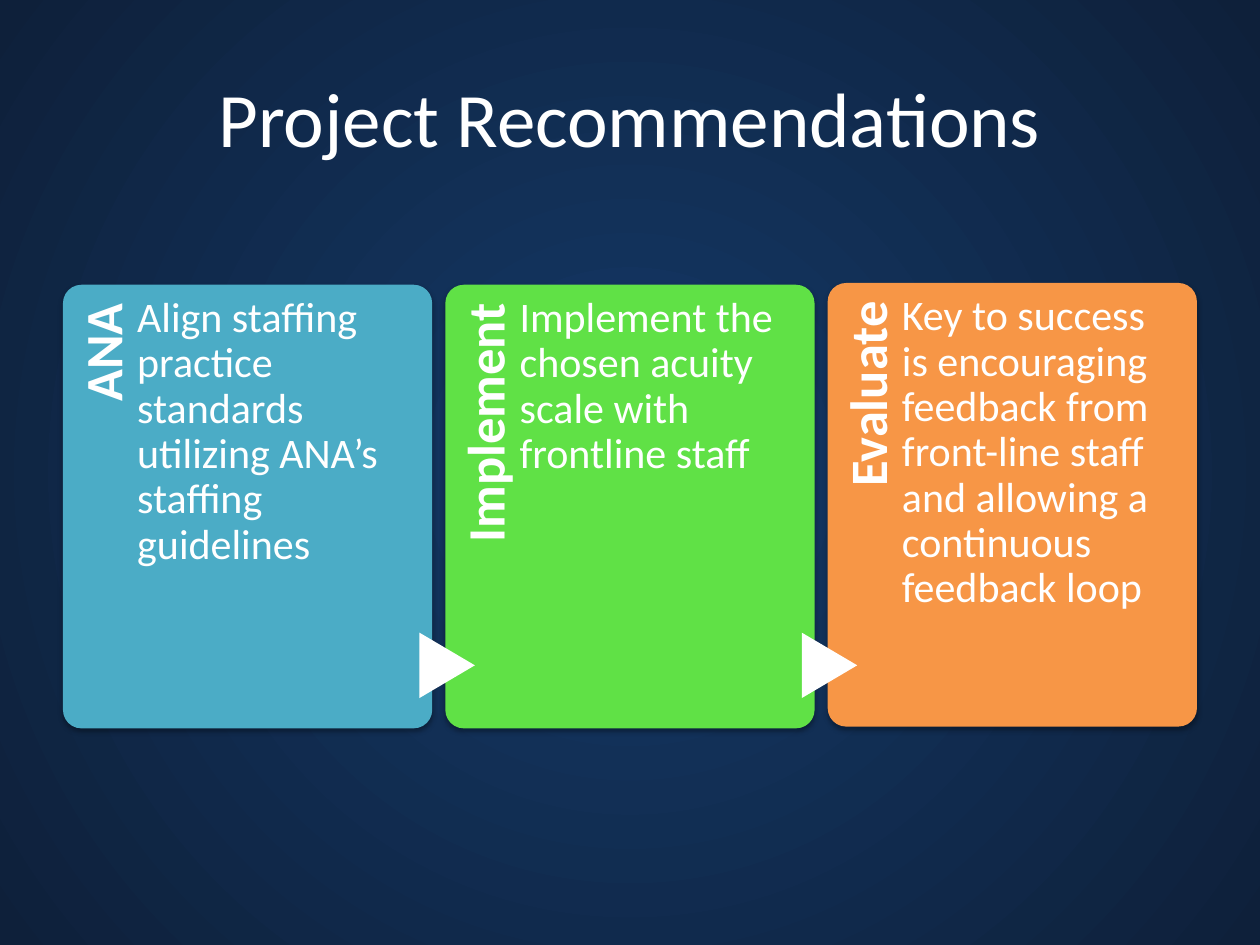
from lxml import etree
from pptx import Presentation
from pptx import oxml
from pptx.dml.color import RGBColor
from pptx.enum import shapes, text
from pptx.oxml import ns
from pptx.util import Pt

COLORS = {
    "centre": "143968", "edge": "0E203A", "white": "FFFFFF", "shadow": "000000",
    "teal": "4BACC6", "green": "60E146", "orange": "F79646",
}
CARDS = [
    ("ANA", "Align staffing practice standards utilizing ANA’s staffing guidelines",
     "teal", 0),
    ("Implement", "Implement the chosen acuity scale with frontline staff",
     "green", 0),
    ("Evaluate", "Key to success is encouraging feedback from front-line staff "
     "and allowing a continuous feedback loop", "orange", -1),
]
CARD_WIDTH, CARD_HEIGHT = 211, 253.5
LABEL_WIDTH, LABEL_LENGTH = 42.4, 207.4
BODY_WIDTH = 157
ARROW_WIDTH, ARROW_HEIGHT = 37.4, 31.7
ARROW_CENTRE = 217.5


def color(name):
    return RGBColor.from_string(COLORS[name])


def write(frame, words, size, bold=False, align=text.PP_ALIGN.LEFT,
          anchor=text.MSO_ANCHOR.TOP, line_spacing=None, insets=None):
    frame.word_wrap = True
    frame.vertical_anchor = anchor
    if insets:
        (frame.margin_left, frame.margin_top,
         frame.margin_right, frame.margin_bottom) = map(Pt, insets)
    paragraph = frame.paragraphs[0]
    paragraph.alignment = align
    if line_spacing:
        paragraph.line_spacing = line_spacing
    run = paragraph.add_run()
    run.text = words
    run.font.name = "Calibri"
    run.font.size = Pt(size)
    run.font.bold = bold
    run.font.color.rgb = color("white")


def add_filled(slide, preset, left, top, width, height, fill):
    shape = slide.shapes.add_shape(preset, Pt(left), Pt(top), Pt(width), Pt(height))
    shape.shadow.inherit = False
    shape.fill.solid()
    shape.fill.fore_color.rgb = color(fill)
    shape.line.fill.background()
    return shape


def add_shadow(shape):
    effects = shape._element.spPr.find(ns.qn("a:effectLst"))
    effects.append(oxml.parse_xml(
        f'<a:outerShdw {ns.nsdecls("a")} blurRad="{Pt(3.1)}" dist="{Pt(1.8)}" '
        f'dir="5400000" rotWithShape="0"><a:srgbClr val="{COLORS["shadow"]}">'
        '<a:alpha val="35000"/></a:srgbClr></a:outerShdw>'))


def paint_background(slide):
    """Fill the slide with a gradient that spreads from its centre."""
    fill = slide.background.fill
    fill.gradient()
    for stop, name in zip(fill.gradient_stops, ("centre", "edge")):
        stop.color.rgb = color(name)
    gradient = slide._element.find(".//" + ns.qn("a:gradFill"))
    gradient.remove(gradient.find(ns.qn("a:lin")))
    circle = etree.SubElement(gradient, ns.qn("a:path"), {"path": "circle"})
    etree.SubElement(circle, ns.qn("a:fillToRect"),
                     dict.fromkeys("ltrb", "50000"))


def place_title(slide, left, top, width, height):
    title = slide.shapes.title
    title.left, title.top, title.width, title.height = map(
        Pt, (left, top, width, height))
    write(title.text_frame, "Project Recommendations", 44,
          align=text.PP_ALIGN.CENTER, anchor=text.MSO_ANCHOR.MIDDLE)


def add_card(slide, left, top, heading, body, fill):
    card = add_filled(slide, shapes.MSO_SHAPE.ROUNDED_RECTANGLE,
                      left, top, CARD_WIDTH, CARD_HEIGHT, fill)
    card.adjustments[0] = 0.05
    add_shadow(card)

    # The turned label keeps its centre, so it stands in the card's left strip.
    offset = (LABEL_LENGTH - LABEL_WIDTH) / 2
    label = slide.shapes.add_textbox(Pt(left - offset), Pt(top + offset),
                                     Pt(LABEL_LENGTH), Pt(LABEL_WIDTH))
    label.rotation = 270
    write(label.text_frame, heading, 30, bold=True, align=text.PP_ALIGN.RIGHT,
          line_spacing=0.9, insets=(0, 8, 10.6, 0))

    box = slide.shapes.add_textbox(Pt(left + LABEL_WIDTH), Pt(top),
                                   Pt(BODY_WIDTH), Pt(CARD_HEIGHT))
    write(box.text_frame, body, 24, line_spacing=0.9, insets=(0, 6.6, 0, 0))


def add_arrow(slide, centre_x, centre_y):
    arrow = add_filled(slide, shapes.MSO_SHAPE.FLOWCHART_EXTRACT,
                       centre_x - ARROW_WIDTH / 2, centre_y - ARROW_HEIGHT / 2,
                       ARROW_WIDTH, ARROW_HEIGHT, "white")
    arrow.rotation = 90


def add_card_row(slide, left, top, width):
    pitch = (width - CARD_WIDTH) / (len(CARDS) - 1)
    for index, (heading, body, fill, shift) in enumerate(CARDS):
        card_left = left + index * pitch
        add_card(slide, card_left, top + shift, heading, body, fill)
        if index:
            add_arrow(slide, card_left + 1, top + ARROW_CENTRE)


def main():
    presentation = Presentation()
    presentation.slide_width, presentation.slide_height = Pt(720), Pt(540)
    slide = presentation.slides.add_slide(presentation.slide_layouts[5])
    paint_background(slide)
    place_title(slide, 36, 21.6, 648, 90)
    add_card_row(slide, 36, 162.7, 648)
    presentation.save("out.pptx")


if __name__ == "__main__":
    main()
